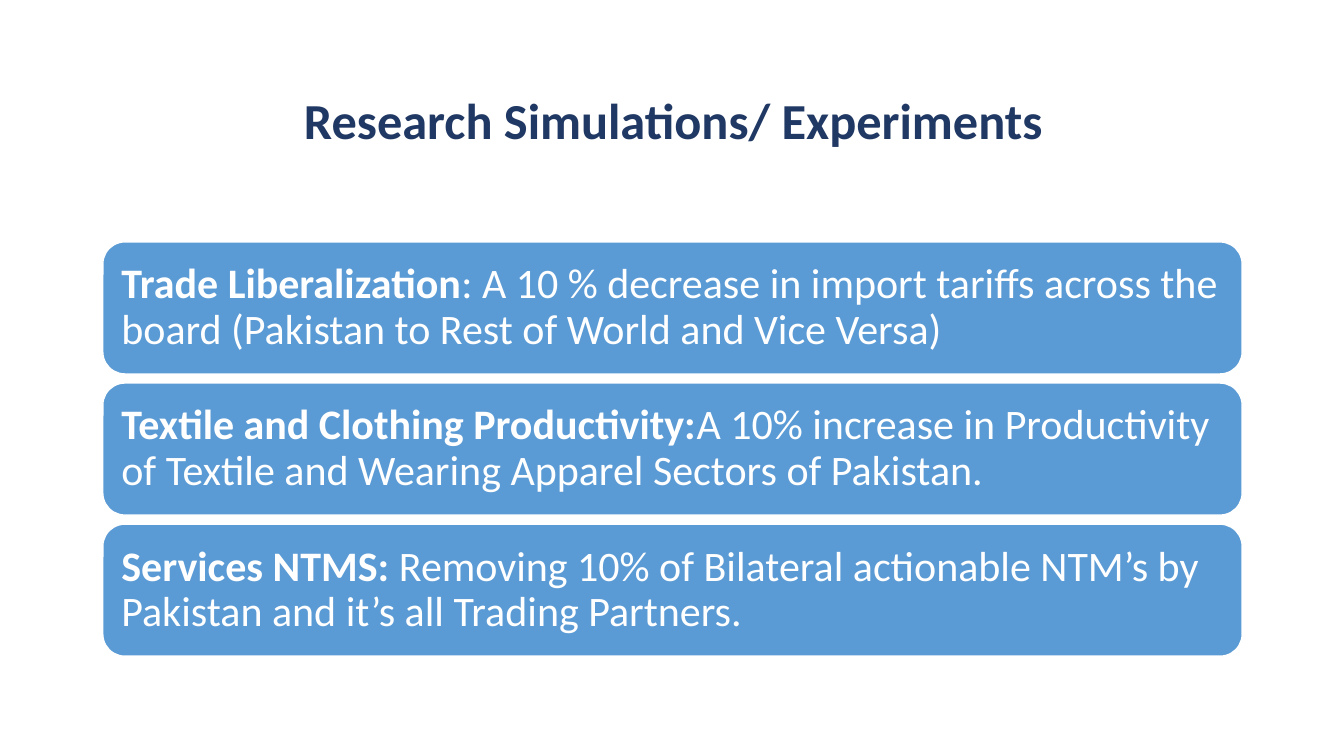
from pptx import Presentation
from pptx.dml.color import RGBColor
from pptx.enum.shapes import MSO_SHAPE as Shape
from pptx.enum.text import MSO_ANCHOR as Anchor, PP_ALIGN as Align
from pptx.util import Inches, Pt

# Content
TITLE = "Research Simulations/ Experiments"
EXPERIMENTS = [
    ("Trade Liberalization",
     ": A 10 % decrease in import tariffs across the board "
     "(Pakistan to Rest of World and Vice Versa)"),
    ("Textile and Clothing Productivity:",
     "A 10% increase in Productivity of Textile and Wearing Apparel "
     "Sectors of Pakistan."),
    ("Services NTMS: ",
     "Removing 10% of Bilateral actionable NTM’s by Pakistan and it’s all "
     "Trading Partners."),
]

# Layout in inches
SLIDE_WIDTH, SLIDE_HEIGHT = 13.33, 7.5
TITLE_BOX = (1.67, 0.6, 10.02, 1.24)
CARD_LEFT, CARD_TOP = 1.02, 2.4
CARD_WIDTH, CARD_HEIGHT = 11.3, 1.31
CARD_PITCH = 1.4
CARD_INSET = 0.12

# Formats
NAVY, BLUE, WHITE = "203864", "5B9BD5", "FFFFFF"
TITLE_FONT = {"name": "Calibri", "size": Pt(36), "bold": True}
LABEL_FONT = {"name": "Calibri", "size": Pt(30), "bold": True}
DETAIL_FONT = {**LABEL_FONT, "bold": False}
CARD_FRAME = {
    "word_wrap": True,
    "vertical_anchor": Anchor.MIDDLE,
    **{f"margin_{side}": Inches(CARD_INSET)
       for side in ("left", "top", "right", "bottom")},
}
TITLE_FRAME = {"word_wrap": True, "vertical_anchor": Anchor.MIDDLE}


def color(hex_value):
    return RGBColor.from_string(hex_value)


def set_attributes(target, values):
    for name, value in values.items():
        setattr(target, name, value)


def write_text(shape, frame_format, alignment, runs):
    frame = shape.text_frame
    set_attributes(frame, frame_format)
    paragraph = frame.paragraphs[0]
    set_attributes(paragraph, {"alignment": alignment, "line_spacing": 0.9})
    for text, font_format, hex_value in runs:
        run = paragraph.add_run()
        run.text = text
        set_attributes(run.font, font_format)
        run.font.color.rgb = color(hex_value)


def add_card(slide, row, label, detail):
    box = (CARD_LEFT, CARD_TOP + row * CARD_PITCH, CARD_WIDTH, CARD_HEIGHT)
    card = slide.shapes.add_shape(Shape.ROUNDED_RECTANGLE, *map(Inches, box))
    card.shadow.inherit = False
    card.fill.solid()
    card.fill.fore_color.rgb = color(BLUE)
    card.line.color.rgb = color(WHITE)
    card.line.width = Pt(1)
    write_text(card, CARD_FRAME, Align.LEFT,
               [(label, LABEL_FONT, WHITE), (detail, DETAIL_FONT, WHITE)])


def main():
    presentation = Presentation()
    presentation.slide_width = Inches(SLIDE_WIDTH)
    presentation.slide_height = Inches(SLIDE_HEIGHT)
    slide = presentation.slides.add_slide(presentation.slide_layouts[6])

    # Title
    title = slide.shapes.add_textbox(*map(Inches, TITLE_BOX))
    write_text(title, TITLE_FRAME, Align.CENTER, [(TITLE, TITLE_FONT, NAVY)])

    # Experiment cards
    for row, (label, detail) in enumerate(EXPERIMENTS):
        add_card(slide, row, label, detail)

    presentation.save("out.pptx")


if __name__ == "__main__":
    main()
